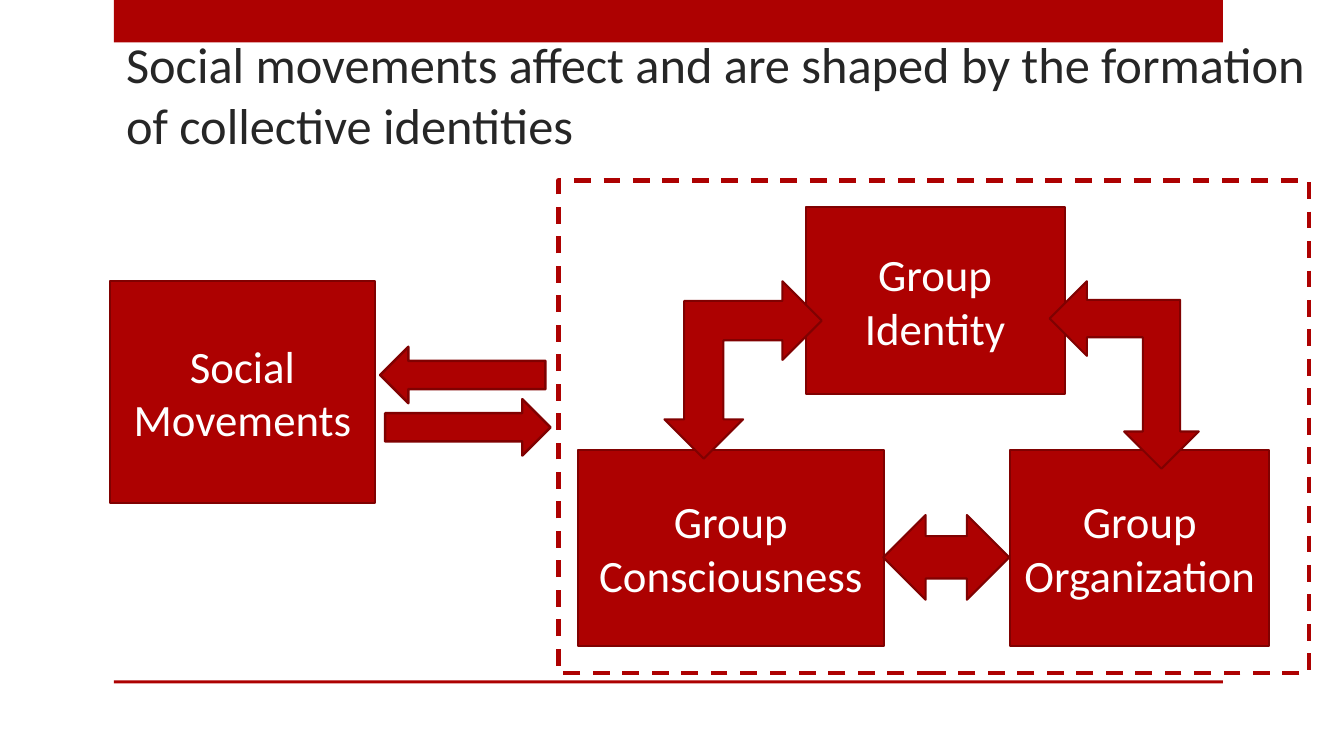
import pptx
import pptx.util
import pptx.dml.color
import pptx.enum.dml
import pptx.enum.shapes
import pptx.enum.text

Inches = pptx.util.Inches
Pt = pptx.util.Pt
RGB = pptx.dml.color.RGBColor
Kind = pptx.enum.shapes.MSO_SHAPE
Align = pptx.enum.text.PP_ALIGN
Anchor = pptx.enum.text.MSO_ANCHOR

RED = RGB(0xAD, 0x01, 0x01)
DARK = RGB(0x80, 0x01, 0x01)
WHITE = RGB(0xFF, 0xFF, 0xFF)
INK = RGB(0x26, 0x26, 0x26)


class Deck:
    """Holds the style and the current slide."""
    font = "Calibri"

    def __init__(self, width, height):
        self.prs = pptx.Presentation()
        self.prs.slide_width = Inches(width)
        self.prs.slide_height = Inches(height)
        self.slide = self.prs.slides.add_slide(self.prs.slide_layouts[5])
        self.host = self.slide.shapes

    def group(self):
        self.host = self.slide.shapes.add_group_shape().shapes

    def ungroup(self):
        self.host = self.slide.shapes

    def label(self, frame, text, size, color, align, anchor):
        frame.word_wrap = True
        frame.auto_size = pptx.enum.text.MSO_AUTO_SIZE.NONE
        frame.vertical_anchor = anchor
        para = frame.paragraphs[0]
        para.alignment = align
        run = para.add_run()
        run.text = text
        run.font.name = self.font
        run.font.size = Pt(size)
        run.font.color.rgb = color

    def title(self, text, *at):
        head = self.slide.shapes.title
        head.left, head.top, head.width, head.height = map(Inches, at)
        self.label(head.text_frame, text, 36, INK, Align.LEFT, Anchor.BOTTOM)

    def shape(self, kind, *at, line=None, turn=0):
        item = self.host.add_shape(kind, *map(Inches, at))
        item.shadow.inherit = False
        item.rotation = turn
        item.fill.solid()
        item.fill.fore_color.rgb = RED
        if line:
            item.line.color.rgb = DARK
            item.line.width = Pt(line)
        else:
            item.line.fill.background()
        return item

    def box(self, text, *at, line=1.5):
        item = self.shape(Kind.RECTANGLE, *at, line=line)
        self.label(item.text_frame, text, 32, WHITE, Align.CENTER, Anchor.MIDDLE)

    def frame(self, *at):
        item = self.shape(Kind.RECTANGLE, *at)
        item.fill.background()
        item.line.color.rgb = RED
        item.line.width = Pt(3)
        item.line.dash_style = pptx.enum.dml.MSO_LINE.DASH


def main():
    deck = Deck(13.33, 7.5)

    # Top band and bottom rule
    for top, tall in ((0, 0.42), (6.75, 0.03)):
        deck.shape(Kind.RECTANGLE, 1.13, top, 11, tall)

    # Collective identity cycle
    deck.group()
    deck.box("Group Identity", 7.99, 2.05, 2.57, 1.86)
    deck.box("Group Consciousness", 5.73, 4.46, 3.04, 1.95)
    deck.box("Group Organization", 10.02, 4.46, 2.57, 1.95)
    deck.shape(Kind.LEFT_UP_ARROW, 6.59, 2.79, 1.56, 1.76, line=1.5, turn=180)
    deck.shape(Kind.LEFT_UP_ARROW, 10.22, 2.98, 1.86, 1.48, line=1.5, turn=270)
    deck.shape(Kind.LEFT_RIGHT_ARROW, 8.76, 5.11, 1.25, 0.84, line=1.5)
    deck.ungroup()

    # Title
    deck.title("Social movements affect and are shaped by the formation "
               "of collective identities", 1.15, 0.67, 12.18, 0.91)

    # Movements and their two-way link to the cycle
    deck.box("Social Movements", 1.09, 2.79, 2.63, 2.2, line=1.75)
    deck.frame(5.54, 1.79, 7.44, 4.89)
    for left, top, turn in ((3.82, 3.96, 0), (3.77, 3.44, 180)):
        deck.shape(Kind.RIGHT_ARROW, left, top, 1.64, 0.56, line=1.75, turn=turn)

    deck.prs.save("out.pptx")


if __name__ == "__main__":
    main()
